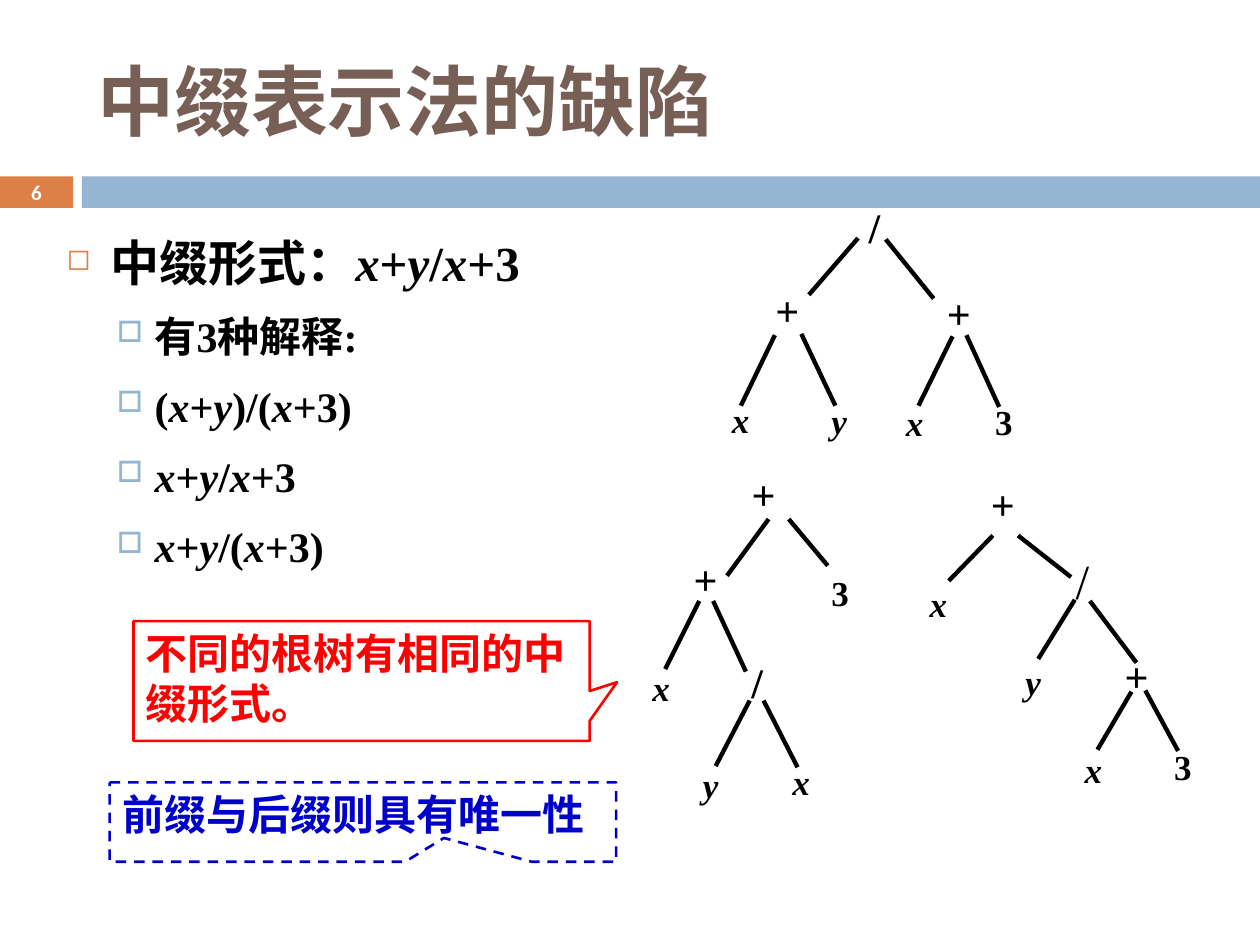
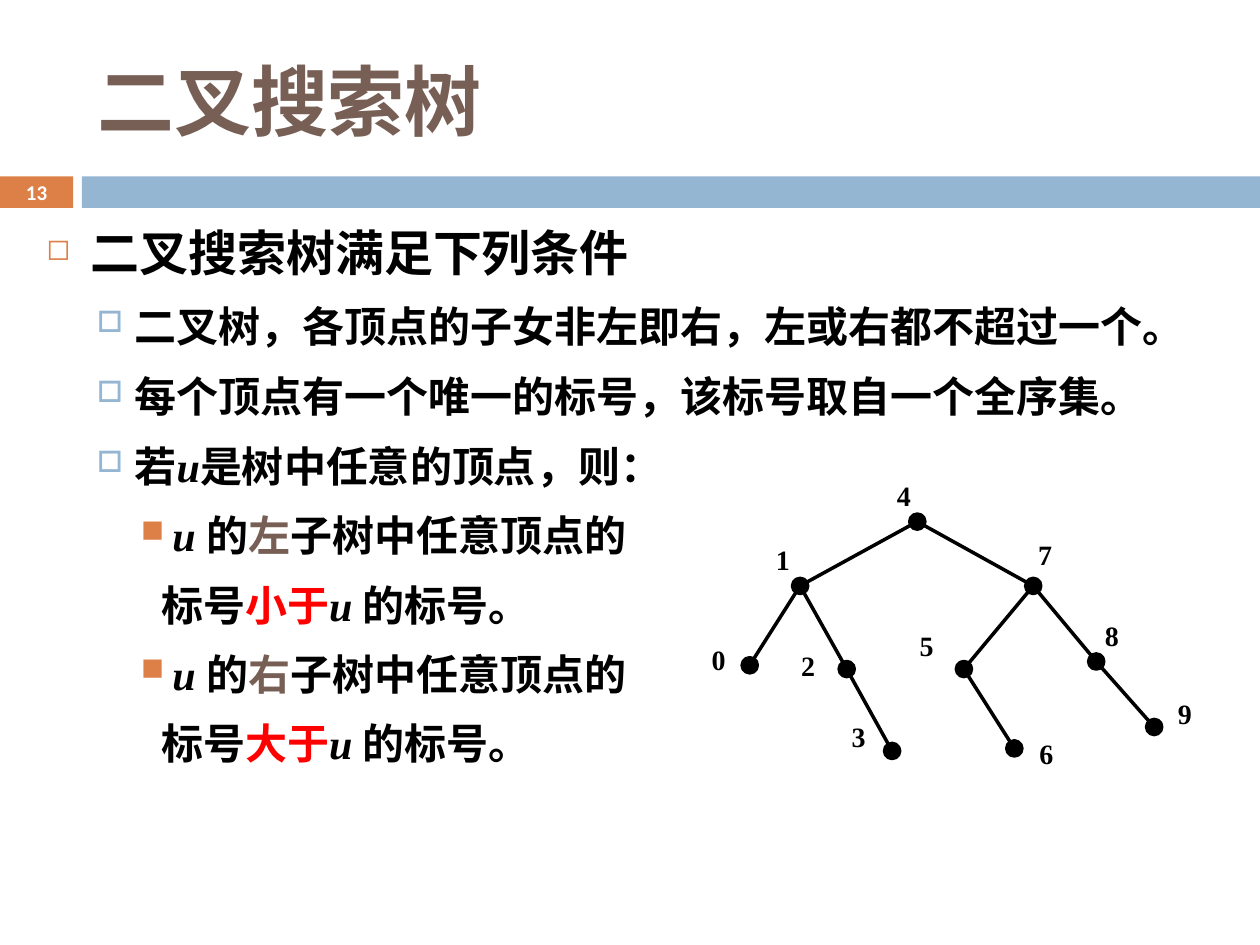
from dataclasses import dataclass
from itertools import groupby
from math import hypot
from typing import NamedTuple

from lxml.etree import SubElement
from pptx import Presentation
from pptx.dml.color import RGBColor
from pptx.enum.dml import MSO_LINE
from pptx.enum.shapes import MSO_CONNECTOR, MSO_SHAPE
from pptx.enum.text import MSO_ANCHOR as Anchor, PP_ALIGN as Align
from pptx.oxml.ns import qn
from pptx.util import Inches, Pt


@dataclass(frozen=True)
class Theme:
    ink: str = "000000"
    white: str = "FFFFFF"
    brown: str = "775F55"
    orange: str = "DD8047"
    blue: str = "94B6D2"
    red: str = "FF0000"
    navy: str = "0000CC"
    serif: str = "Times New Roman"
    sans: str = "Calibri"
    callout: str = "Arial"
    title_size: float = 44
    heading_size: float = 28
    text_size: float = 24
    leaf_size: float = 20
    key_size: float = 16
    number_size: float = 12


class Level(NamedTuple):
    depth: int
    indent: float
    hanging: float
    size: float
    space_before: float
    bullet: str = ""
    bullet_color: str = ""
    bullet_percent: int = 100


class Operator(NamedTuple):
    sign: str
    center: float
    top: float
    size: float = 24
    bold: bool = True


THEME = Theme()
VARIABLES = "xyu"
HEADING = Level(0, 0.35, -0.35, THEME.heading_size, 7, "◻", THEME.orange, 60)
POINT = Level(1, 0.7, -0.3, THEME.text_size, 5.5, "□", THEME.blue, 70)
SUBPOINT = Level(2, 1, -0.25, THEME.text_size, 5, "■", THEME.orange, 75)
CONTINUATION = Level(2, 0.91, 0, THEME.text_size, 5)

# Each tree: operators, leaves (symbol, left, top), edges (x1, y1, x2, y2)
EXPRESSION_TREES = [
    ([Operator("/", 6.94, 1.55), Operator("+", 6.25, 2.21), Operator("+", 7.61, 2.23)],
     [("x", 5.71, 3.11), ("y", 6.5, 3.12), ("x", 7.09, 3.14), ("3", 7.8, 3.13)],
     [(6.81, 1.89, 6.42, 2.34), (7.03, 1.9, 7.41, 2.37),
      (6.15, 2.66, 5.88, 3.22), (6.36, 2.65, 6.63, 3.22),
      (7.56, 2.67, 7.29, 3.22), (7.67, 2.66, 7.93, 3.23)]),
    ([Operator("+", 6.06, 3.67), Operator("+", 5.6, 4.34), Operator("/", 6.01, 5.16)],
     [("3", 6.5, 4.49), ("x", 5.08, 5.24), ("y", 5.48, 6.01), ("x", 6.19, 5.99)],
     [(6.1, 4.12, 5.77, 4.57), (6.26, 4.12, 6.57, 4.49),
      (5.55, 4.77, 5.28, 5.31), (5.66, 4.77, 5.92, 5.33),
      (5.95, 5.56, 5.68, 6.08), (6.06, 5.56, 6.33, 6.09)]),
    ([Operator("+", 7.96, 3.75), Operator("/", 8.59, 4.32, 28, False),
      Operator("+", 9.02, 5.11)],
     [("x", 7.28, 4.57), ("y", 8.04, 5.19), ("x", 8.51, 5.89), ("3", 9.22, 5.87)],
     [(7.88, 4.25, 7.53, 4.61), (8.08, 4.25, 8.5, 4.58),
      (8.53, 4.76, 8.24, 5.23), (8.65, 4.77, 9.02, 5.26),
      (8.98, 5.49, 8.71, 5.95), (9.09, 5.48, 9.35, 5.96)]),
]

# Key: vertex centre, then left and top of its label
SEARCH_VERTICES = {
    4: ((7.28, 4.14), (7.02, 3.75)),
    1: ((6.35, 4.65), (6.06, 4.26)),
    7: ((8.2, 4.65), (8.14, 4.22)),
    0: ((5.95, 5.28), (5.55, 5.05)),
    2: ((6.72, 5.31), (6.26, 5.1)),
    5: ((7.65, 5.31), (7.2, 4.94)),
    8: ((8.7, 5.25), (8.67, 4.86)),
    3: ((7.08, 5.96), (6.66, 5.66)),
    6: ((8.05, 5.94), (8.15, 5.8)),
    9: ((9.16, 5.77), (9.25, 5.48)),
}
SEARCH_EDGES = [(4, 1), (4, 7), (1, 0), (1, 2), (7, 5), (7, 8), (2, 3), (5, 6), (8, 9)]
VERTEX_RADIUS = 0.06


def rgb(color):
    return RGBColor.from_string(color)


def box(left, top, width, height):
    return [Inches(length) for length in (left, top, width, height)]


def style(run, size, color=THEME.ink, font=THEME.serif, bold=True, italic=False):
    run.font.size = Pt(size)
    run.font.name = font
    run.font.bold = bold
    run.font.italic = italic
    run.font.color.rgb = rgb(color)


def set_text(frame, text, align=Align.LEFT, **look):
    frame.word_wrap = True
    frame.text = text
    paragraph = frame.paragraphs[0]
    paragraph.alignment = align
    style(paragraph.runs[0], **look)


def add_label(slide, text, place, align=Align.LEFT, **look):
    label = slide.shapes.add_textbox(*box(*place))
    set_text(label.text_frame, text, align, **look)


def add_block(slide, preset, place, fill=None, line=None, line_width=1.5):
    block = slide.shapes.add_shape(preset, *box(*place))
    block.shadow.inherit = False
    if fill:
        block.fill.solid()
        block.fill.fore_color.rgb = rgb(fill)
    else:
        block.fill.background()
    if line:
        block.line.color.rgb = rgb(line)
        block.line.width = Pt(line_width)
    else:
        block.line.fill.background()
    return block


def add_edge(slide, x1, y1, x2, y2, width):
    edge = slide.shapes.add_connector(MSO_CONNECTOR.STRAIGHT, *box(x1, y1, x2, y2))
    edge.line.color.rgb = rgb(THEME.ink)
    edge.line.width = Pt(width)
    SubElement(edge._element.spPr, qn("a:effectLst"))


def add_callout(slide, text, place, tip, color, font, dash=None):
    callout = add_block(slide, MSO_SHAPE.RECTANGULAR_CALLOUT, place, line=color)
    callout.adjustments[0], callout.adjustments[1] = tip
    if dash:
        callout.line.dash_style = dash
    callout.text_frame.vertical_anchor = Anchor.TOP
    set_text(callout.text_frame, text, size=THEME.text_size, color=color, font=font)


def set_bullet(paragraph, level):
    properties = paragraph._p.get_or_add_pPr()
    properties.set("marL", str(Inches(level.indent)))
    properties.set("indent", str(Inches(level.hanging)))
    if not level.bullet:
        SubElement(properties, qn("a:buNone"))
        return
    color = SubElement(properties, qn("a:buClr"))
    SubElement(color, qn("a:srgbClr"), val=level.bullet_color)
    SubElement(properties, qn("a:buSzPct"), val=str(level.bullet_percent * 1000))
    SubElement(properties, qn("a:buChar"), char=level.bullet)


def add_outline(slide, place, lines, align):
    """Write (level, text, accent) lines; |bars| mark accented words, variables go italic."""
    frame = slide.shapes.add_textbox(*box(*place)).text_frame
    frame.word_wrap = True
    for index, (level, text, accent) in enumerate(lines):
        paragraph = frame.add_paragraph() if index else frame.paragraphs[0]
        paragraph.level = level.depth
        paragraph.alignment = align
        paragraph.line_spacing = 1.2
        paragraph.space_before = Pt(level.space_before)
        set_bullet(paragraph, level)
        for part, words in enumerate(text.split("|")):
            color = accent if part % 2 else THEME.ink
            for italic, letters in groupby(words, lambda letter: letter in VARIABLES):
                run = paragraph.add_run()
                run.text = "".join(letters)
                style(run, level.size, color, italic=italic)


def add_titled_slide(deck, title, number, title_font):
    slide = deck.slides.add_slide(deck.slide_layouts[5])
    heading = slide.shapes.title
    heading.left, heading.top, heading.width, heading.height = box(0.67, 0.25, 8.92, 1.08)
    heading.text_frame.vertical_anchor = Anchor.MIDDLE
    set_text(heading.text_frame, title, size=THEME.title_size,
             color=THEME.brown, font=title_font)

    add_block(slide, MSO_SHAPE.RECTANGLE, (0.65, 1.4, 9.35, 0.25), THEME.blue)
    badge = add_block(slide, MSO_SHAPE.RECTANGLE, (0, 1.4, 0.58, 0.25), THEME.orange)
    frame = badge.text_frame
    frame.margin_top = frame.margin_bottom = 0
    frame.vertical_anchor = Anchor.MIDDLE
    set_text(frame, str(number), Align.CENTER, size=THEME.number_size,
             color=THEME.white, font=THEME.sans)
    return slide


def add_expression_tree(slide, operators, leaves, edges):
    for edge in edges:
        add_edge(slide, *edge, width=2.5)
    for sign, center, top, size, bold in operators:
        add_label(slide, sign, (center - 0.2, top, 0.4, 0.36), Align.CENTER,
                  size=size, bold=bold)
    for symbol, left, top in leaves:
        width = 0.32 if symbol == "x" else 0.55
        add_label(slide, symbol, (left, top, width, 0.35),
                  size=THEME.leaf_size, italic=symbol in VARIABLES)


def add_search_tree(slide):
    """Draw the vertices, with edges running from rim to rim."""
    for parent, child in SEARCH_EDGES:
        (x1, y1), (x2, y2) = SEARCH_VERTICES[parent][0], SEARCH_VERTICES[child][0]
        trim = VERTEX_RADIUS / hypot(x2 - x1, y2 - y1)
        dx, dy = (x2 - x1) * trim, (y2 - y1) * trim
        add_edge(slide, x1 + dx, y1 + dy, x2 - dx, y2 - dy, width=2)
    diameter = 2 * VERTEX_RADIUS
    for key, ((x, y), (left, top)) in SEARCH_VERTICES.items():
        add_block(slide, MSO_SHAPE.OVAL,
                  (x - VERTEX_RADIUS, y - VERTEX_RADIUS, diameter, diameter),
                  THEME.ink, THEME.ink, 2)
        add_label(slide, str(key), (left, top, 0.59, 0.51), size=THEME.key_size)


def build_infix_slide(deck):
    slide = add_titled_slide(deck, "中缀表示法的缺陷", 6, THEME.serif)
    readings = ["有3种解释:", "(x+y)/(x+3)", "x+y/x+3", "x+y/(x+3)"]
    lines = [(HEADING, "中缀形式：x+y/x+3", None)]
    lines += [(POINT, reading, None) for reading in readings]
    add_outline(slide, (0.43, 1.7, 4.33, 3.07), lines, Align.JUSTIFY)
    for tree in EXPRESSION_TREES:
        add_expression_tree(slide, *tree)
    add_callout(slide, "不同的根树有相同的中缀形式。", (1.06, 4.93, 3.62, 0.95),
                (0.56, 0.01), THEME.red, THEME.callout)
    add_callout(slide, "前缀与后缀则具有唯一性", (0.87, 6.21, 4.02, 0.63),
                (0.16, 0.2), THEME.navy, THEME.serif, MSO_LINE.DASH)


def build_search_tree_slide(deck):
    slide = add_titled_slide(deck, "二叉搜索树", 13, THEME.sans)
    lines = [
        (HEADING, "二叉搜索树满足下列条件", None),
        (POINT, "二叉树，各顶点的子女非左即右，左或右都不超过一个。", None),
        (POINT, "每个顶点有一个唯一的标号，该标号取自一个全序集。", None),
        (POINT, "若u是树中任意的顶点，则：", None),
    ]
    for side, relation in (("左", "小于"), ("右", "大于")):
        lines += [(SUBPOINT, f"u 的|{side}|子树中任意顶点的", THEME.brown),
                  (CONTINUATION, f"标号|{relation}|u 的标号。", THEME.red)]
    add_outline(slide, (0.27, 1.62, 9.21, 4.73), lines, Align.LEFT)
    add_search_tree(slide)


def main():
    deck = Presentation()
    deck.slide_width, deck.slide_height = Inches(10), Inches(7.5)
    build_infix_slide(deck)
    build_search_tree_slide(deck)
    deck.save("out.pptx")


if __name__ == "__main__":
    main()
